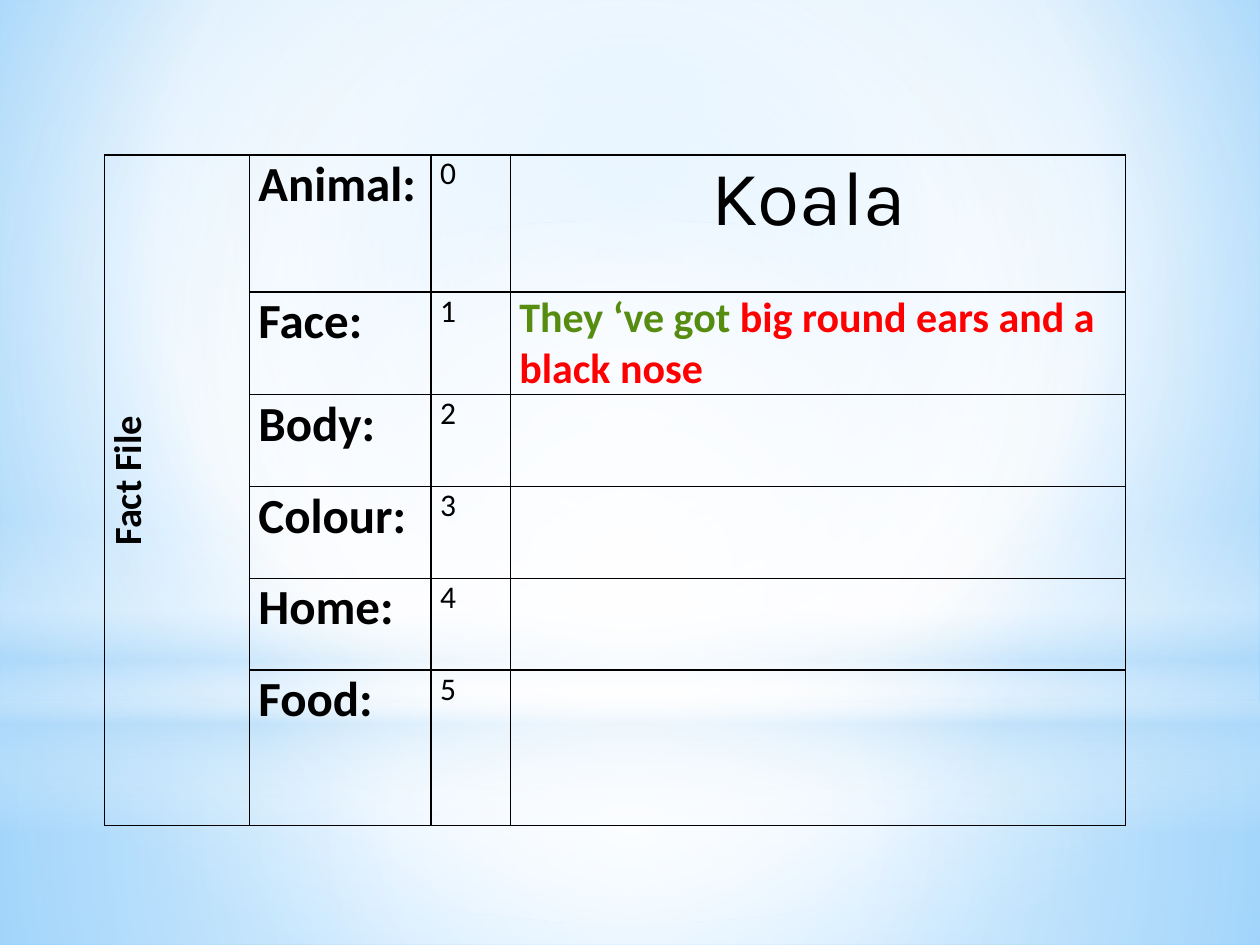
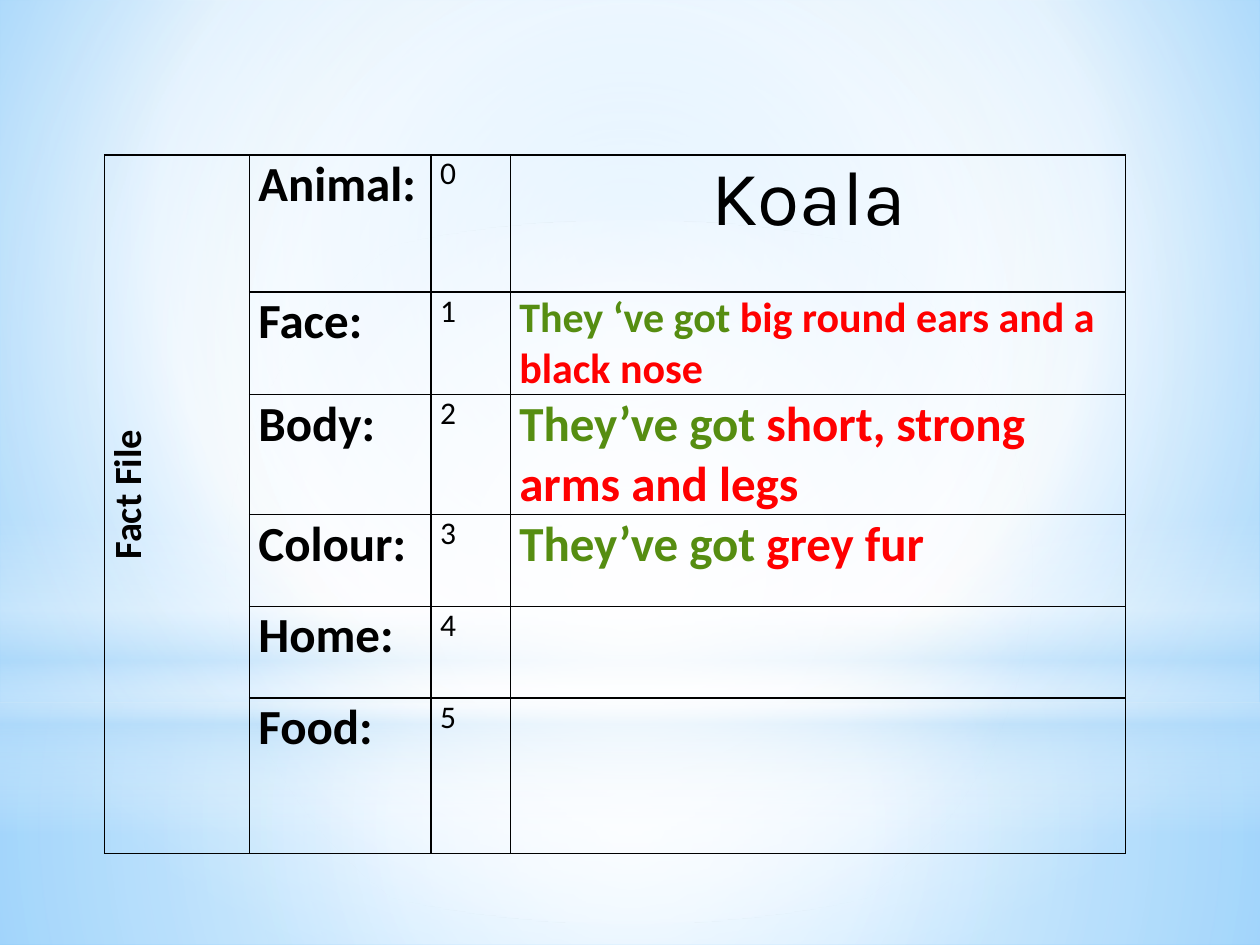
from lxml.etree import SubElement
from pptx import Presentation
from pptx.dml.color import RGBColor
from pptx.enum.shapes import MSO_SHAPE
from pptx.enum.text import MSO_ANCHOR, PP_ALIGN
from pptx.oxml.ns import qn
from pptx.util import Cm, Pt

BLACK = RGBColor(0x00, 0x00, 0x00)
WHITE = RGBColor(0xFF, 0xFF, 0xFF)
GREEN = RGBColor(0x56, 0x8D, 0x11)
RED = RGBColor(0xFF, 0x00, 0x00)
SKY = RGBColor(0x9E, 0xD5, 0xFF)
DEEP_SKY = RGBColor(0x5B, 0xB9, 0xFF)
MIST = RGBColor(0xB4, 0xDC, 0xFA)

CENTRE = (50, 50, 50, 50)
BANDS = [  # shape, top, height, focus (None for a vertical gradient), stops
    (MSO_SHAPE.RECTANGLE, 14.17, 4.88, CENTRE,
     [(0, WHITE, 91), (37, WHITE, 76), (100, MIST, 79)]),
    (MSO_SHAPE.RECTANGLE, 0, 14.17, CENTRE,
     [(0, WHITE, 89), (48, WHITE, 62), (100, MIST, 79)]),
    (MSO_SHAPE.RECTANGLE, 10.46, 6.35, None,
     [(0, WHITE, 0), (29, WHITE, 30), (45, MIST, 40),
      (55, WHITE, 26), (65, MIST, 60), (100, WHITE, 0)]),
    (MSO_SHAPE.OVAL, 4.45, 14.17, CENTRE, [(0, WHITE, 100), (56, WHITE, 0)]),
]

LABELS = ["Animal:", "Face:", "Body:", "Colour:", "Home:", "Food:"]
COLUMN_WIDTHS = [2.92, 3.66, 1.6, 12.4]
ROW_HEIGHTS = [2.77, 1.85, 1.85, 1.85, 1.85, 3.13]
FACE = (1, 24, "They ‘ve got ", "big round ears and a black nose")
BODY = (2, 28, "They’ve got ", "short, strong arms and legs")
COLOUR = (3, 28, "They’ve got ", "grey fur")
PAGE_FACTS = [[FACE], [FACE, BODY, COLOUR]]


def set_gradient(fill, element, stops, focus):
    """Fill with (position, colour, opacity) stops, round when focus is given."""
    fill.solid()
    solid = element.find(".//" + qn("a:solidFill"))
    parent = solid.getparent()
    gradient = SubElement(parent, qn("a:gradFill"), rotWithShape="1")
    parent.replace(solid, gradient)
    stop_list = SubElement(gradient, qn("a:gsLst"))
    for position, colour, opacity in stops:
        stop = SubElement(stop_list, qn("a:gs"), pos=str(position * 1000))
        tint = SubElement(stop, qn("a:srgbClr"), val=str(colour))
        if opacity < 100:
            SubElement(tint, qn("a:alpha"), val=str(opacity * 1000))
    if focus:
        circle = SubElement(gradient, qn("a:path"), path="circle")
        sides = {side: str(share * 1000) for side, share in zip("ltrb", focus)}
        SubElement(circle, qn("a:fillToRect"), sides)
    else:
        SubElement(gradient, qn("a:lin"), ang="5400000", scaled="0")


def write(cell, pieces, size, bold=False, font="Calibri", align=PP_ALIGN.LEFT):
    """Put (text, colour) pieces into the cell's only paragraph."""
    para = cell.text_frame.paragraphs[0]
    para.alignment = align
    for text, colour in pieces:
        span = para.add_run()
        span.text = text
        span.font.size = Pt(size)
        span.font.bold = bold
        span.font.name = font
        span.font.color.rgb = colour


deck = Presentation()
deck.slide_width, deck.slide_height = Cm(25.4), Cm(19.05)
blank = deck.slide_layouts[6]
pages = [deck.slides.add_slide(blank) for facts in PAGE_FACTS]

# Shared backdrop, moved to the master behind its placeholders
master = deck.slide_master
set_gradient(master.background.fill, master.element,
             [(0, SKY, 100), (60, WHITE, 100), (100, DEEP_SKY, 100)], (20, 10, 20, 60))
for order, (kind, top, height, focus, stops) in enumerate(BANDS):
    band = pages[0].shapes.add_shape(kind, 0, Cm(top), deck.slide_width, Cm(height))
    band.shadow.inherit = False
    band.line.fill.background()
    set_gradient(band.fill, band.element, stops, focus)
    master.shapes.element.insert(2 + order, band.element)

# One fact file per page
for page, facts in zip(pages, PAGE_FACTS):
    frame = page.shapes.add_table(len(LABELS), len(COLUMN_WIDTHS), Cm(2.11), Cm(3.12),
                                  Cm(sum(COLUMN_WIDTHS)), Cm(sum(ROW_HEIGHTS)))
    table = frame.table
    table.first_row = table.horz_banding = False
    for column, width in zip(table.columns, COLUMN_WIDTHS):
        column.width = Cm(width)
    for row, height in zip(table.rows, ROW_HEIGHTS):
        row.height = Cm(height)

    for cell in table.iter_cells():
        cell.margin_left = cell.margin_right = Cm(0.18)
        cell.margin_top = cell.margin_bottom = 0
        cell.fill.background()
        properties = cell._tc.get_or_add_tcPr()
        for order, side in enumerate(("lnL", "lnR", "lnT", "lnB")):
            border = SubElement(properties, qn("a:" + side), w=str(Pt(1)))
            ink = SubElement(border, qn("a:solidFill"))
            SubElement(ink, qn("a:srgbClr"), val=str(BLACK))
            properties.insert(order, border)

    title = table.cell(0, 0)
    title.merge(table.cell(len(LABELS) - 1, 0))
    title.vertical_anchor = MSO_ANCHOR.MIDDLE
    title._tc.get_or_add_tcPr().set("vert", "vert270")
    write(title, [(" Fact File", BLACK)], 22, bold=True, align=PP_ALIGN.CENTER)
    title.text_frame.paragraphs[0]._p.get_or_add_pPr().set("marL", str(Cm(0.2)))

    for number, label in enumerate(LABELS):
        write(table.cell(number, 1), [(label, BLACK)], 28, bold=True)
        write(table.cell(number, 2), [(str(number), BLACK)], 18)
    write(table.cell(0, 3), [("Koala ", BLACK)], 44, font="Karla", align=PP_ALIGN.CENTER)
    for number, size, opening, detail in facts:
        write(table.cell(number, 3), [(opening, GREEN), (detail, RED)], size, bold=True)

deck.save("out.pptx")
